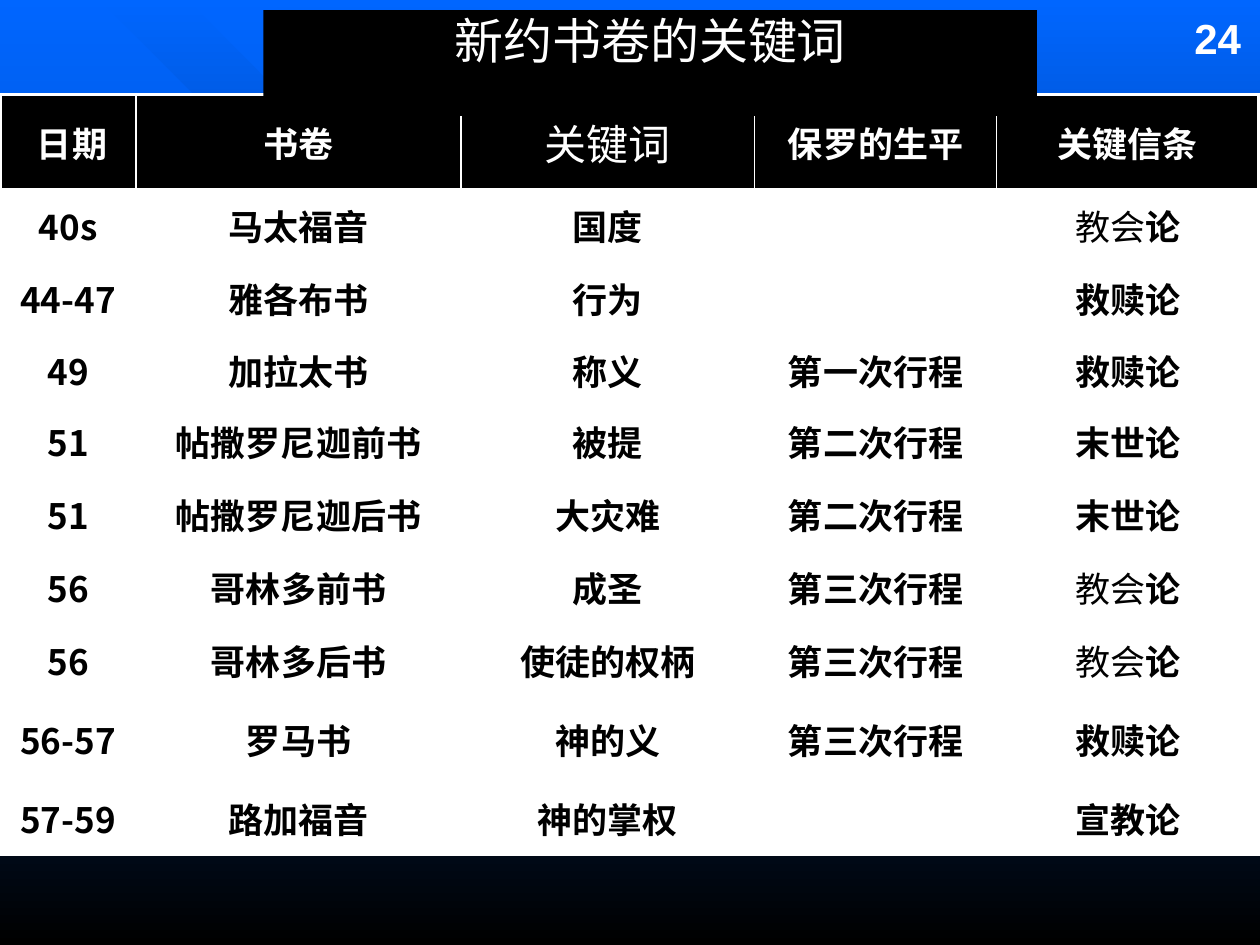
from dataclasses import dataclass

from lxml import etree
from pptx import Presentation
from pptx import util as u
from pptx.dml.color import RGBColor
from pptx.enum import shapes, text
from pptx.oxml import ns


@dataclass(frozen=True)
class Theme:
    """Colours, fonts and type sizes of the deck."""
    blue: RGBColor = RGBColor.from_string("0066FF")
    black: RGBColor = RGBColor.from_string("000000")
    white: RGBColor = RGBColor.from_string("FFFFFF")
    chinese: str = "Noto Sans CJK SC"
    latin: str = "Arial"
    title: int = 28
    heading: int = 24
    body: int = 20
    outer_border: float = 2.25
    inner_border: float = 1


BANDS = [
    [(6.7, 5.93), (0.79, 0), (0, 0), (0, 0.84), (5.89, 6.75)],
    [(2.14, 0), (7.38, 5.27), (7.06, 5.59), (1.49, 0)],
    [(4.89, 0), (8.76, 3.89), (8.21, 4.44), (3.8, 0)],
    [(5.3, 0), (8.97, 3.68), (9.27, 3.38), (5.91, 0)],
]
COLUMN_WIDTHS = [1.08, 2.58, 2.33, 1.92, 2.08]
ROW_HEIGHTS = [0.75, 0.58, 0.57, 0.57, 0.57, 0.58, 0.58, 0.58, 0.68, 0.57]
CHURCH = ("教会", "论")
ROWS = [
    [" 日期", "书卷", "关键词", "保罗的生平", "关键信条"],
    ["40s", "马太福音", "国度", "", CHURCH],
    ["44-47", "雅各布书", "行为", "", "救赎论"],
    ["49", "加拉太书", "称义", "第一次行程", "救赎论"],
    ["51", "帖撒罗尼迦前书", "被提", "第二次行程", "末世论"],
    ["51", "帖撒罗尼迦后书", "大灾难", "第二次行程", "末世论"],
    ["56", "哥林多前书", "成圣", "第三次行程", CHURCH],
    ["56", "哥林多后书", "使徒的权柄", "第三次行程", CHURCH],
    ["56-57", "罗马书", "神的义", "第三次行程", "救赎论"],
    ["57-59", "路加福音", "神的掌权", "", "宣教论"],
]


class SlideBuilder:
    """Draws themed elements on the current slide."""

    def __init__(self, page, theme):
        self.page = page
        self.theme = theme

    def background(self):
        fill = self.page.background.fill
        fill.gradient()
        fill.gradient_angle = 270
        for stop, color, position in zip(
                fill.gradient_stops, (self.theme.blue, self.theme.black), (0, 1)):
            stop.color.rgb = color
            stop.position = position

    def band(self, points):
        start, *rest = [(u.Inches(x), u.Inches(y)) for x, y in points]
        builder = self.page.shapes.build_freeform(*start)
        builder.add_line_segments(rest, close=True)
        shape = builder.convert_to_shape()
        shape.shadow.inherit = False
        shape.fill.solid()
        shape.fill.fore_color.rgb = self.theme.blue
        shape.line.fill.background()
        color = shape.fill._xPr.find(f".//{ns.qn('a:srgbClr')}")
        etree.SubElement(color, ns.qn("a:alpha"), val="50000")

    def style(self, font, name, size, color, bold):
        font.name, font.size, font.bold = name, u.Pt(size), bold
        font.color.rgb = color
        east_asian = etree.Element(ns.qn("a:ea"), typeface=name)
        font._rPr.find(ns.qn("a:latin")).addnext(east_asian)

    def title(self, words, left, top, width, height):
        box = self.page.shapes.add_shape(
            shapes.MSO_SHAPE.RECTANGLE, *map(u.Inches, (left, top, width, height)))
        box.shadow.inherit = False
        box.fill.solid()
        box.fill.fore_color.rgb = self.theme.black
        box.line.fill.background()
        frame = box.text_frame
        frame.word_wrap = True
        frame.vertical_anchor = text.MSO_ANCHOR.TOP
        frame.margin_top = 0
        para = frame.paragraphs[0]
        para.text = words
        para.alignment = text.PP_ALIGN.CENTER
        self.style(para.font, self.theme.chinese, self.theme.title, self.theme.white, False)

    def page_number(self, words, left, top, width, height):
        box = self.page.shapes.add_textbox(*map(u.Inches, (left, top, width, height)))
        box.text_frame.word_wrap = False
        para = box.text_frame.paragraphs[0]
        para.text = words
        self.style(para.font, self.theme.latin, self.theme.heading, self.theme.white, True)

    def borders(self, cell, outer_edges):
        properties = cell._tc.get_or_add_tcPr()
        for index, (tag, outer) in enumerate(zip(("lnL", "lnR", "lnT", "lnB"), outer_edges)):
            points = self.theme.outer_border if outer else self.theme.inner_border
            line = etree.Element(ns.qn(f"a:{tag}"), w=str(u.Pt(points)))
            fill = etree.SubElement(line, ns.qn("a:solidFill"))
            etree.SubElement(fill, ns.qn("a:srgbClr"), val=str(self.theme.white))
            properties.insert(index, line)

    def cell(self, cell, words, is_header, is_keyword_heading):
        cell.fill.solid()
        cell.fill.fore_color.rgb = self.theme.black if is_header else self.theme.white
        cell.vertical_anchor = text.MSO_ANCHOR.MIDDLE
        para = cell.text_frame.paragraphs[0]
        para.alignment = text.PP_ALIGN.CENTER
        size = self.theme.heading if is_keyword_heading else self.theme.body
        color = self.theme.white if is_header else self.theme.black
        self.style(para.font, self.theme.chinese, size, color, not is_keyword_heading)
        if isinstance(words, str):
            words = (words,) if words else ()
        for position, part in enumerate(words):
            span = para.add_run()
            span.text = part
            light = is_keyword_heading or position < len(words) - 1
            self.style(span.font, self.theme.chinese, size, color, not light)

    def table(self, rows, left, top, widths, heights):
        frame = self.page.shapes.add_table(
            len(heights), len(widths), u.Inches(left), u.Inches(top),
            u.Inches(sum(widths)), u.Inches(sum(heights)))
        grid = frame.table
        for column, width in zip(grid.columns, widths):
            column.width = u.Inches(width)
        for row, height in zip(grid.rows, heights):
            row.height = u.Inches(height)
        for r, row in enumerate(rows):
            for c, words in enumerate(row):
                cell = grid.cell(r, c)
                self.cell(cell, words, r == 0, (r, c) == (0, 2))
                self.borders(cell, (c == 0, c == len(widths) - 1,
                                    r == 0, r == len(heights) - 1))


def main():
    deck = Presentation()
    deck.slide_width, deck.slide_height = u.Inches(10), u.Inches(7.5)
    page = deck.slides.add_slide(deck.slide_layouts[6])
    builder = SlideBuilder(page, Theme())
    builder.background()
    for points in BANDS:
        builder.band(points)
    builder.table(ROWS, 0, 0.75, COLUMN_WIDTHS, ROW_HEIGHTS)
    builder.title("新约书卷的关键词", 2.09, 0.08, 6.14, 0.84)
    builder.page_number("24", 9.38, 0.05, 0.58, 0.51)
    deck.save("out.pptx")


if __name__ == "__main__":
    main()
